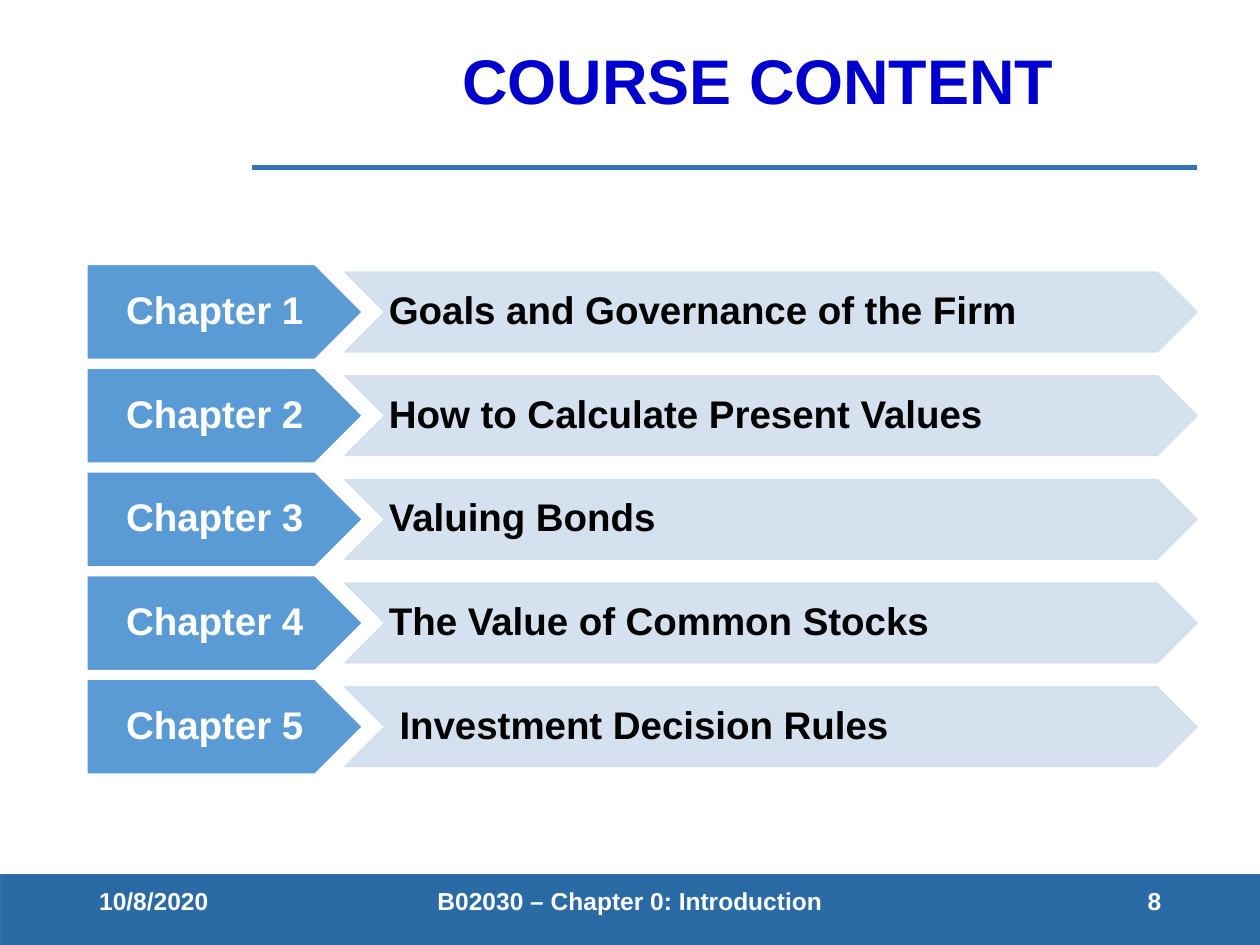
"""Build the course content slide with one arrow row per chapter."""
from lxml import etree
from pptx import Presentation
from pptx.dml.color import RGBColor
from pptx.enum.shapes import MSO_CONNECTOR, MSO_SHAPE
from pptx.enum.text import MSO_ANCHOR, PP_ALIGN
from pptx.oxml.ns import qn
from pptx.util import Cm, Pt

RECT, PLATE, CHEVRON = MSO_SHAPE.RECTANGLE, MSO_SHAPE.PENTAGON, MSO_SHAPE.CHEVRON
STRAIGHT = MSO_CONNECTOR.STRAIGHT
LEFT, CENTER, RIGHT = PP_ALIGN.LEFT, PP_ALIGN.CENTER, PP_ALIGN.RIGHT
MIDDLE = MSO_ANCHOR.MIDDLE

COLORS = {
    "title": "0000CC", "rule": "2E75B6", "band": "2A6BA6", "plate": "5B9BD5",
    "bar": "D2DEEF", "white": "FFFFFF", "black": "000000",
}
TOPICS = [
    "Goals and Governance of the Firm",
    "How to Calculate Present Values",
    "Valuing Bonds",
    "The Value of Common Stocks",
    " Investment Decision Rules",
]
FOOTER = [
    (1.75, 5.72, "10/8/2020", LEFT),
    (8.41, 8.58, "B02030 – Chapter 0: Introduction", CENTER),
    (17.94, 5.72, "8", RIGHT),
]
TOP, PITCH = 5.33, 2.09


def color(name):
    return RGBColor.from_string(COLORS[name])


def box(*sides):
    return [Cm(side) for side in sides]


def write(shape, text, size, ink, align, spacing=1.0):
    frame = shape.text_frame
    frame.word_wrap = True
    frame.vertical_anchor = MIDDLE
    frame.text = text
    para = frame.paragraphs[0]
    para.alignment = align
    para.line_spacing = spacing
    font = para.runs[0].font
    font.name, font.size, font.bold = "Arial", Pt(size), True
    font.color.rgb = color(ink)


def add_block(slide, kind, place, fill, line):
    shape = slide.shapes.add_shape(kind, *box(*place))
    shape.shadow.inherit = False
    shape.fill.solid()
    shape.fill.fore_color.rgb = color(fill)
    shape.line.color.rgb = color(line)
    shape.line.width = Pt(1)
    return shape


def add_arrow(slide, kind, place, fill, line, text, ink, align):
    shape = add_block(slide, kind, place, fill, line)
    frame = shape.text_frame
    frame.margin_left, frame.margin_right = box(0.08, 0)
    frame.margin_top = frame.margin_bottom = Cm(0.05)
    write(shape, text, 22, ink, align, 0.9)
    return shape


def fade(shape, percent):
    for tint in shape._element.spPr.iter(qn("a:srgbClr")):
        etree.SubElement(tint, qn("a:alpha"), val=str(percent * 1000))


def add_rule(slide, left, right, y):
    rule = slide.shapes.add_connector(STRAIGHT, *box(left, y, right, y))
    rule.line.color.rgb = color("rule")
    rule.line.width = Pt(3)
    etree.SubElement(rule._element.spPr, qn("a:effectLst"))


def add_title(slide, text):
    title = slide.shapes.title
    title.left, title.top, title.width, title.height = box(5.08, 0, 20.4, 3.38)
    write(title, text, 36, "title", CENTER, 0.9)


def add_row(slide, index, topic):
    top = TOP + index * PITCH
    add_arrow(slide, PLATE, (1.75, top, 5.56, 1.92), "plate", "white",
              f"Chapter {index + 1}", "white", CENTER)
    bar = add_arrow(slide, CHEVRON, (6.96, top + 0.16, 17.17, 1.6), "bar", "bar",
                    topic, "black", LEFT)
    fade(bar, 90)


def add_footer(slide):
    for left, width, text, align in FOOTER:
        note = slide.shapes.add_textbox(*box(left, 17.65, width, 1.02))
        write(note, text, 14, "white", align)


def main():
    deck = Presentation()
    deck.slide_width, deck.slide_height = box(25.4, 19.05)
    slide = deck.slides.add_slide(deck.slide_layouts[5])
    add_block(slide, RECT, (0, 17.63, 25.5, 1.47), "band", "rule")
    add_rule(slide, 5.08, 24.13, 3.38)
    add_title(slide, "COURSE CONTENT")
    for index, topic in enumerate(TOPICS):
        add_row(slide, index, topic)
    add_footer(slide)
    deck.save("out.pptx")


if __name__ == "__main__":
    main()
